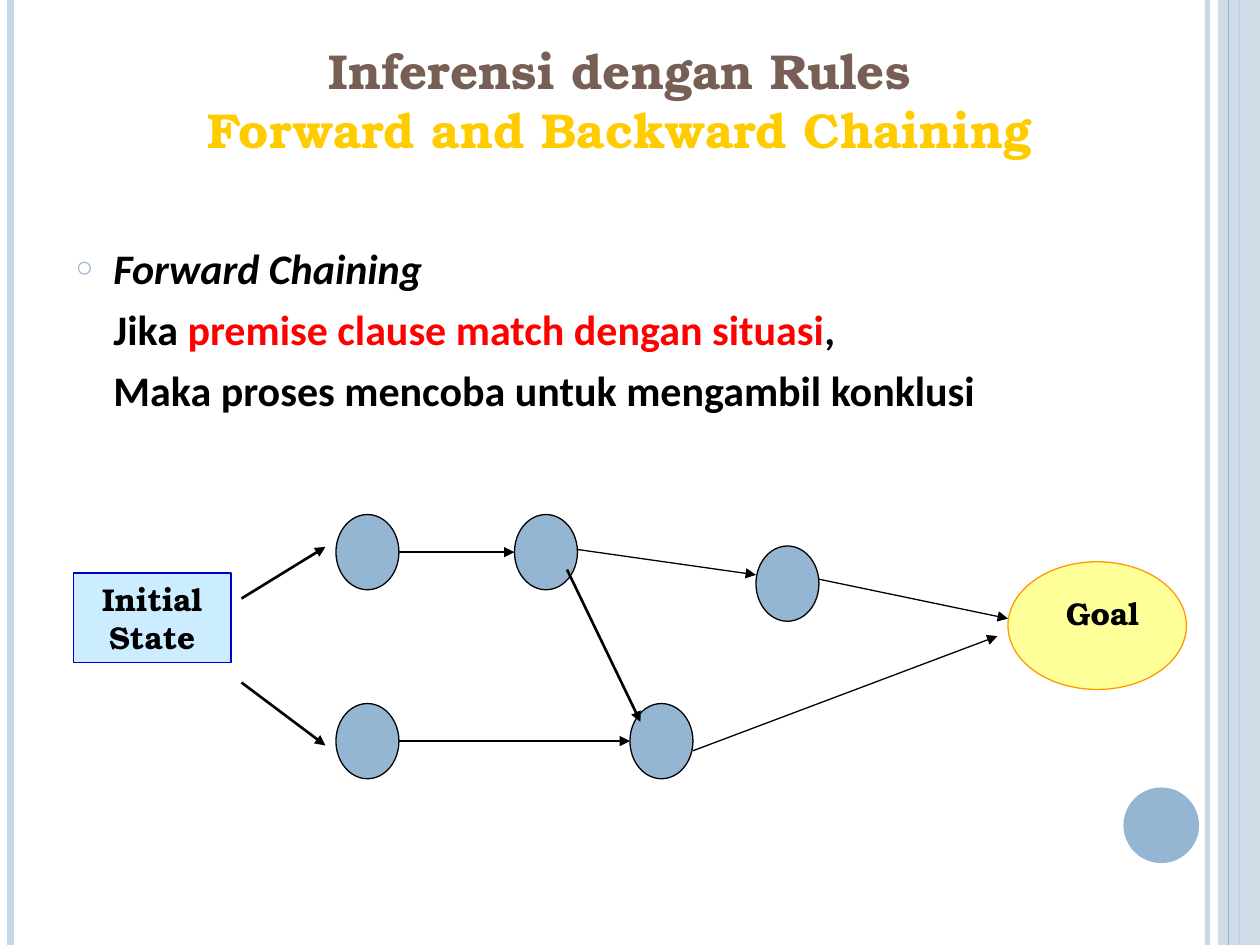
"""Build the forward chaining slide with its inference diagram."""
from dataclasses import dataclass

from lxml.etree import SubElement
from pptx import Presentation
from pptx.dml.color import RGBColor
from pptx.enum.shapes import MSO_CONNECTOR as CONN, MSO_SHAPE as SHAPE
from pptx.enum.text import MSO_ANCHOR as ANCHOR, MSO_AUTO_SIZE as FIT, PP_ALIGN as ALIGN
from pptx.oxml.ns import qn
from pptx.util import Pt


@dataclass(frozen=True)
class Theme:
    serif: str = "TeX Gyre Bonum"
    sans: str = "Calibri"
    title_size: int = 28
    body_size: int = 24
    label_size: int = 18
    black: str = "000000"
    brown: str = "775F55"
    gold: str = "FFCC00"
    red: str = "FF0000"
    blue: str = "94B6D2"
    pale_blue: str = "C8D7E5"
    state_fill: str = "CCECFF"
    state_line: str = "0000CC"
    goal_fill: str = "FFFF99"
    goal_line: str = "FF9900"


T = Theme()
NODE_W, NODE_H = 36, 43
THIN, THICK = 0.75, 1.5


def rgb(color):
    return RGBColor.from_string(color)


def place(s, left, top, width, height):
    s.left, s.top, s.width, s.height = Pt(left), Pt(top), Pt(width), Pt(height)


def add_text(p, text, size=T.label_size, font=T.serif, color=T.black, bold=True, italic=False):
    r = p.add_run()
    r.text = text
    r.font.size, r.font.name = Pt(size), font
    r.font.bold, r.font.italic = bold, italic
    r.font.color.rgb = rgb(color)


def set_alpha(fill, percent):
    color = fill._xPr.find(".//" + qn("a:srgbClr"))
    SubElement(color, qn("a:alpha"), val=str(percent * 1000))


def add_shape(s, kind, box, fill, line=None, alpha=None):
    sp = s.shapes.add_shape(kind, *map(Pt, box))
    sp.shadow.inherit = False
    sp.fill.solid()
    sp.fill.fore_color.rgb = rgb(fill)
    if alpha:
        set_alpha(sp.fill, alpha)
    if line:
        sp.line.color.rgb = rgb(line)
        sp.line.width = Pt(THIN)
    else:
        sp.line.fill.background()
    return sp


def add_line(s, start, end, width, color=T.black, alpha=None, arrow=False):
    cx = s.shapes.add_connector(CONN.STRAIGHT, *map(Pt, (*start, *end)))
    cx.line.color.rgb = rgb(color)
    cx.line.width = Pt(width)
    if alpha:
        set_alpha(cx.line.fill, alpha)
    if arrow:
        SubElement(cx.line._get_or_add_ln(), qn("a:tailEnd"), type="triangle")
    SubElement(cx._element.spPr, qn("a:effectLst"))


def add_label(sp, text):
    tf = sp.text_frame
    tf.word_wrap = True
    p = tf.paragraphs[0]
    p.alignment = ALIGN.CENTER
    add_text(p, text)


def set_bullet(p, bulleted):
    pPr = p._p.get_or_add_pPr()
    pPr.set("marL", str(Pt(21.6)))
    pPr.set("indent", str(Pt(-21.6 if bulleted else 0)))
    if bulleted:
        SubElement(SubElement(pPr, qn("a:buClr")), qn("a:srgbClr"), val=T.blue)
        SubElement(pPr, qn("a:buSzPct"), val="70000")
        SubElement(pPr, qn("a:buChar"), char="○")
    else:
        SubElement(pPr, qn("a:buNone"))


def add_frame(s):
    add_line(s, (690, 0), (690, 540), 3, T.pale_blue, alpha=93)
    add_line(s, (6, 0), (6, 540), 4.5, T.pale_blue)
    add_line(s, (708, 0), (708, 540), THICK, T.blue)
    add_shape(s, SHAPE.RECTANGLE, (696, 0, 24, 540), T.pale_blue, alpha=87)
    add_line(s, (702, 0), (702, 540), THIN, T.blue)
    add_shape(s, SHAPE.OVAL, (642, 450, 43.2, 43.2), T.blue)


def fill_title(title):
    place(title, 54, 18, 600, 78)
    tf = title.text_frame
    tf.auto_size, tf.vertical_anchor = FIT.NONE, ANCHOR.MIDDLE
    p = tf.paragraphs[0]
    p.alignment = ALIGN.CENTER
    add_text(p, "Inferensi dengan Rules", size=T.title_size, color=T.brown)
    p.add_line_break()
    add_text(p, "Forward and Backward Chaining", size=T.title_size, color=T.gold)


def fill_body(body):
    place(body, 36, 135, 636, 140)
    tf = body.text_frame
    tf.auto_size = FIT.NONE
    lines = [
        [("Forward Chaining", {"italic": True})],
        [("Jika ", {}), ("premise clause match dengan situasi", {"color": T.red}), (",", {})],
        [("Maka proses mencoba untuk mengambil konklusi", {})],
    ]
    for i, line in enumerate(lines):
        p = tf.add_paragraph() if i else tf.paragraphs[0]
        p.space_before = Pt(6)
        set_bullet(p, bulleted=i == 0)
        for text, style in line:
            add_text(p, text, size=T.body_size, font=T.sans, **style)


def add_diagram(s):
    for left, top in [(192, 402), (192, 294), (360, 402), (432, 312), (294, 294)]:
        add_shape(s, SHAPE.OVAL, (left, top, NODE_W, NODE_H), T.blue, T.black)
    arrows = [
        ((228, 315.5), (294, 315.5), THICK),
        ((468, 331), (576, 353.5), THIN),
        ((330, 314), (432, 328.5), THIN),
        ((324, 325.5), (366, 412.5), THICK),
        ((228, 423.5), (360, 423.5), THICK),
        ((396, 429), (570, 363.5), THIN),
        ((138, 390), (186, 426), THICK),
        ((138, 342), (186, 312.5), THICK),
    ]
    for start, end, width in arrows:
        add_line(s, start, end, width, arrow=True)
    state = add_shape(s, SHAPE.RECTANGLE, (42, 327.5, 90, 51), T.state_fill, T.state_line)
    add_label(state, "Initial State")
    add_shape(s, SHAPE.OVAL, (576, 321, 102, 73), T.goal_fill, T.goal_line)
    add_label(s.shapes.add_textbox(Pt(594), Pt(336), Pt(72), Pt(29)), "Goal")


def main():
    prs = Presentation()
    prs.slide_width, prs.slide_height = Pt(720), Pt(540)
    s = prs.slides.add_slide(prs.slide_layouts[1])
    add_frame(s)
    fill_title(s.shapes.title)
    fill_body(s.placeholders[1])
    add_diagram(s)
    prs.save("out.pptx")


if __name__ == "__main__":
    main()
